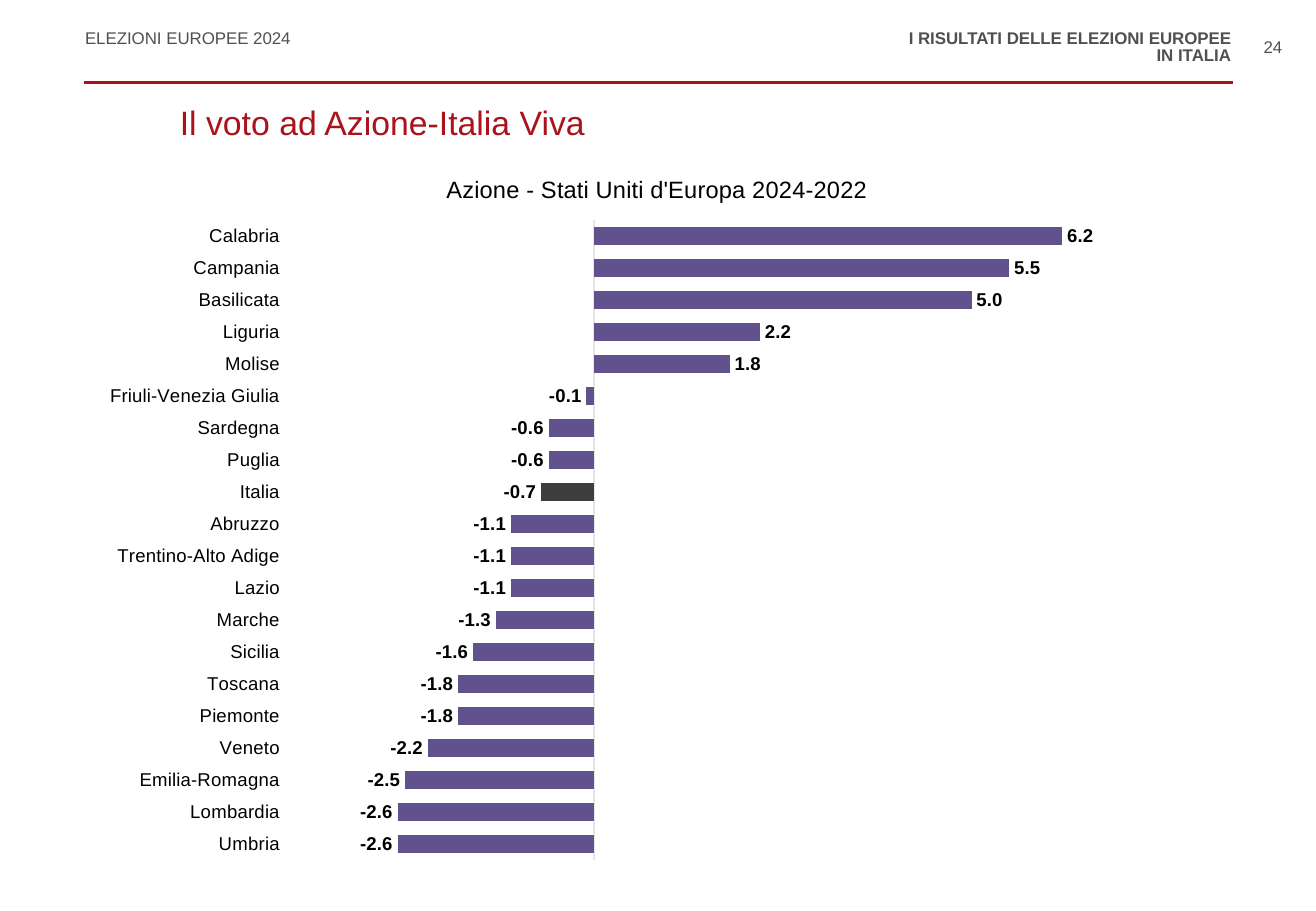
import pptx
import pptx.chart.data
import pptx.dml.color
import pptx.enum.chart
import pptx.enum.shapes
import pptx.enum.text
import pptx.oxml
import pptx.oxml.ns
import pptx.util
from pptx.util import Inches

HUES = {"red": "AA121C", "grey": "505050", "bar": "61528D", "dark": "3E3E3E",
        "axis": "E5E5E5", "text": "000000"}
ALIGN = pptx.enum.text.PP_ALIGN
VOTES = {
    "Umbria": -2.6, "Lombardia": -2.6, "Emilia-Romagna": -2.5, "Veneto": -2.2,
    "Piemonte": -1.8, "Toscana": -1.8, "Sicilia": -1.6, "Marche": -1.3,
    "Lazio": -1.1, "Trentino-Alto Adige": -1.1, "Abruzzo": -1.1, "Italia": -0.7,
    "Puglia": -0.6, "Sardegna": -0.6, "Friuli-Venezia Giulia": -0.1,
    "Molise": 1.8, "Liguria": 2.2, "Basilicata": 5.0, "Campania": 5.5,
    "Calabria": 6.2,
}


def hue(name):
    return pptx.dml.color.RGBColor.from_string(HUES[name])


def style(font, size, color="text", bold=False):
    font.name, font.size, font.bold = "Arial", pptx.util.Pt(size), bold
    font.color.rgb = hue(color)


def write(frame, text, size=10, color="grey", bold=False, align=ALIGN.LEFT,
          pad=0, wrap=True, space=0.85):
    frame.word_wrap = wrap
    frame.vertical_anchor = pptx.enum.text.MSO_ANCHOR.TOP
    frame.margin_left = frame.margin_right = Inches(pad)
    frame.margin_top = frame.margin_bottom = Inches(pad)
    frame.text = text
    for para in frame.paragraphs:
        para.alignment, para.line_spacing = align, space
        para.space_before = pptx.util.Pt(0)
        style(para.font, size, color, bold)


def place(owner, x, y, w=None, h=None):
    rows = [("xMode", "edge"), ("yMode", "edge"), ("x", x), ("y", y)]
    if w:
        rows = [("layoutTarget", "inner")] + rows + [("w", w), ("h", h)]
    body = "".join(f'<c:{tag} val="{val}"/>' for tag, val in rows)
    old = owner.find(pptx.oxml.ns.qn("c:layout"))
    new = pptx.oxml.parse_xml(
        f'<c:layout {pptx.oxml.ns.nsdecls("c")}><c:manualLayout>{body}'
        '</c:manualLayout></c:layout>')
    if old is not None:
        owner.replace(old, new)
    else:
        tx = owner.find(pptx.oxml.ns.qn("c:tx"))
        owner.insert(0 if tx is None else 1, new)


class Deck:
    """Holds the page and draws each kind of element on it."""

    def __init__(self):
        self.file = pptx.Presentation()
        self.file.slide_width, self.file.slide_height = Inches(10.83), Inches(7.5)
        self.page = self.file.slides.add_slide(self.file.slide_layouts[5])

    def title(self, text, x, y, w, h):
        head = self.page.shapes.title
        head.left, head.top, head.width, head.height = map(Inches, (x, y, w, h))
        write(head.text_frame, text, size=20, color="red")

    def text(self, text, x, y, w, h, **look):
        box = self.page.shapes.add_textbox(*map(Inches, (x, y, w, h)))
        write(box.text_frame, text, **look)

    def rule(self, x, y, end):
        line = self.page.shapes.add_connector(
            pptx.enum.shapes.MSO_CONNECTOR.STRAIGHT,
            Inches(x), Inches(y), Inches(end), Inches(y))
        line.line.color.rgb = hue("red")
        line.line.width = pptx.util.Pt(1.5)
        props = line.element.spPr
        props.append(props.makeelement(pptx.oxml.ns.qn("a:effectLst"), {}))

    def bars(self, title, votes, mark, x, y, w, h):
        enum = pptx.enum.chart
        data = pptx.chart.data.CategoryChartData(number_format="0.0")
        data.categories = list(votes)
        data.add_series("Series 1", list(votes.values()))
        chart = self.page.shapes.add_chart(
            enum.XL_CHART_TYPE.BAR_CLUSTERED, *map(Inches, (x, y, w, h)), data).chart
        style(chart.font, 10)
        chart.has_legend = False
        frame = chart.chart_title.text_frame
        frame.text = title
        style(frame.paragraphs[0].font, 14)
        chart.chart_title.include_in_layout = False
        place(chart.chart_title.format.fill and chart.chart_title.element, 0.313, 0.037)
        place(chart.element.chart.plotArea, 0.18, 0.105, 0.803, 0.875)

        cats, vals = chart.category_axis, chart.value_axis
        cats.tick_label_position = enum.XL_TICK_LABEL_POSITION.LOW
        cats.major_tick_mark = enum.XL_TICK_MARK.NONE
        cats.format.line.color.rgb = hue("axis")
        cats.format.line.width = pptx.util.Pt(0.75)
        style(cats.tick_labels.font, 11)
        vals.minimum_scale, vals.maximum_scale = -4, 8
        vals.has_major_gridlines = vals.visible = False

        plot = chart.plots[0]
        plot.gap_width, plot.vary_by_categories = 80, False
        row = plot.series[0]
        row.invert_if_negative = False
        spot = row.points[list(votes).index(mark)]
        for part, color in ((row, "bar"), (spot, "dark")):
            part.format.fill.solid()
            part.format.fill.fore_color.rgb = hue(color)
        tags = row.data_labels
        tags.show_value = True
        tags.position = enum.XL_LABEL_POSITION.OUTSIDE_END
        tags.number_format, tags.number_format_is_linked = "0.0", False
        style(tags.font, 11, bold=True)


def main():
    deck = Deck()
    deck.text("ELEZIONI EUROPEE 2024", 0.7, 0.25, 4.16, 0.15)
    deck.rule(0.69, 0.68, 10.15)
    deck.title("Il voto ad Azione-Italia Viva", 1.48, 0.89, 8.82, 0.57)
    deck.text("24", 10.34, 0.25, 0.27, 0.25, align=ALIGN.CENTER, pad=0.05,
              wrap=False, space=1.0)
    deck.text("I RISULTATI DELLE ELEZIONI EUROPEE\nIN ITALIA", 5.59, 0.25, 4.54,
              0.29, bold=True, align=ALIGN.RIGHT)
    deck.bars("Azione - Stati Uniti d'Europa 2024-2022", VOTES, "Italia",
              0.73, 1.18, 9.29, 6.02)
    deck.file.save("out.pptx")


if __name__ == "__main__":
    main()
